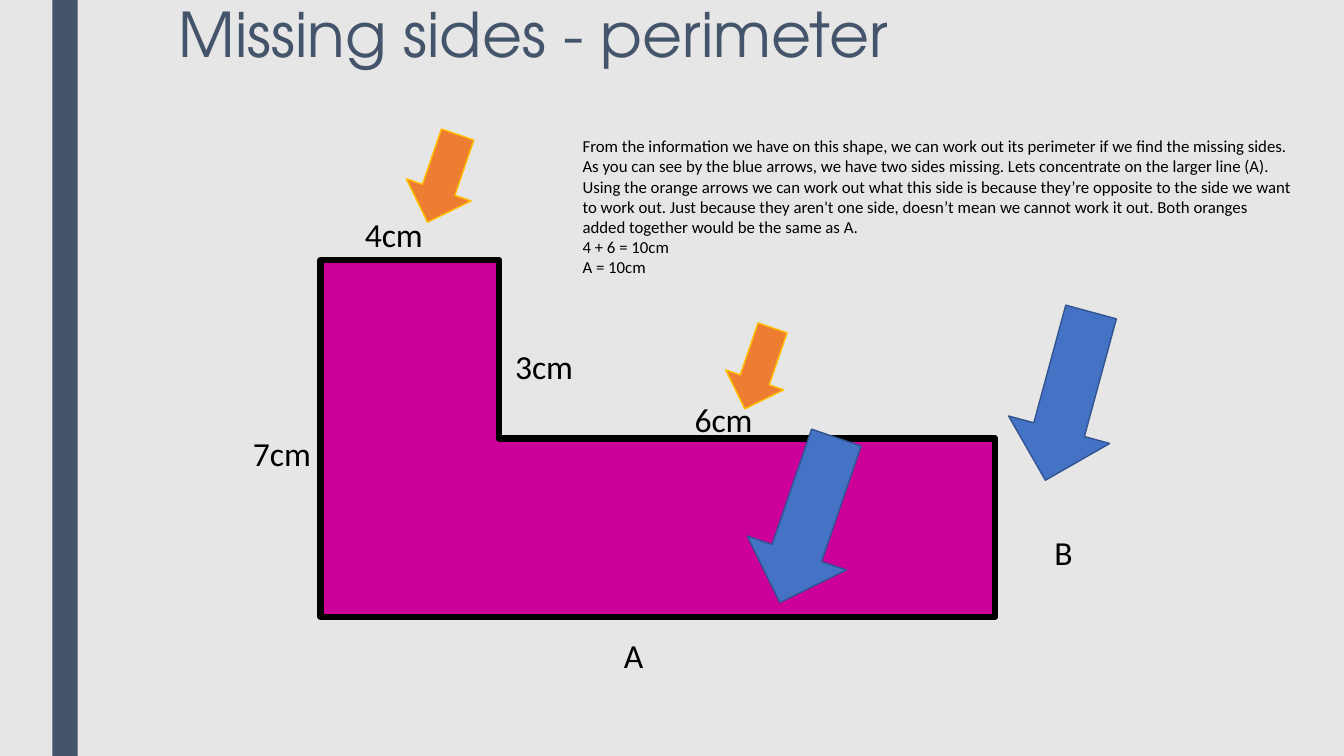
from pptx import Presentation
from pptx.dml.color import RGBColor
from pptx.enum.shapes import MSO_SHAPE as Shape
from pptx.enum.text import MSO_ANCHOR as Anchor, MSO_AUTO_SIZE as AutoSize, PP_ALIGN as Align
from pptx.util import Pt

EMU_PER_PX = 9144  # 100 px to the inch
SLIDE_WIDTH, SLIDE_HEIGHT = 1333, 750
LABEL_WIDTH, LABEL_HEIGHT = 193, 50
TITLE_ONLY = 5

COLORS = {
    "background": "E7E6E6",
    "slate": "44546A",
    "magenta": "CC0099",
    "black": "000000",
    "blue": "4472C4",
    "blue_line": "325491",
    "orange": "ED7D31",
    "orange_line": "FFC000",
}

EXPLANATION = [
    "From the information we have on this shape, we can work out its perimeter "
    "if we find the missing sides. As you can see by the blue arrows, we have two "
    "sides missing. Lets concentrate on the larger line (A). Using the orange arrows "
    "we can work out what this side is because they’re opposite to the side we want "
    "to work out. Just because they aren't one side, doesn’t mean we cannot work it "
    "out. Both oranges added together would be the same as A.",
    "4 + 6 = 10cm",
    "A = 10cm",
]

SIDE_LABELS = [
    ("4cm", 352, 207),
    ("7cm", 241, 425),
    ("3cm", 501, 338),
    ("6cm", 679, 391),
    ("A", 609, 625),
    ("B", 1036, 523),
]

ARROWS = [
    ("blue", (973, 341, 173, 104), 285.2),
    ("blue", (715, 464, 173, 104), 288.9),
    ("orange", (393, 143, 92, 68), 288.9),
    ("orange", (710, 335, 85, 61), 288.9),
]


def px(length):
    return length * EMU_PER_PX


def color(name):
    return RGBColor.from_string(COLORS[name])


def format_text(text_frame, font_name, size, color_name):
    text_frame.word_wrap = True
    text_frame.vertical_anchor = Anchor.TOP
    for paragraph in text_frame.paragraphs:
        paragraph.alignment = Align.LEFT
        for run in paragraph.runs:
            run.font.name = font_name
            run.font.size = Pt(size)
            run.font.color.rgb = color(color_name)


def add_title(slide, text, box):
    title = slide.shapes.title
    title.left, title.top, title.width, title.height = map(px, box)
    text_frame = title.text_frame
    text_frame.text = text
    text_frame.auto_size = AutoSize.NONE
    text_frame.paragraphs[0].line_spacing = 0.89
    format_text(text_frame, "TeX Gyre Adventor", 44, "slate")


def add_text(slide, text, box, size, auto_size=AutoSize.SHAPE_TO_FIT_TEXT):
    text_frame = slide.shapes.add_textbox(*map(px, box)).text_frame
    text_frame.text = text
    text_frame.auto_size = auto_size
    format_text(text_frame, "Calibri", size, "black")


def add_figure(slide, kind, box, fill, line=None, line_width=1, rotation=0):
    shape = slide.shapes.add_shape(kind, *map(px, box))
    shape.shadow.inherit = False
    shape.rotation = rotation
    shape.fill.solid()
    shape.fill.fore_color.rgb = color(fill)
    if line:
        shape.line.color.rgb = color(line)
        shape.line.width = Pt(line_width)
    else:
        shape.line.fill.background()


def main():
    presentation = Presentation()
    presentation.slide_width = px(SLIDE_WIDTH)
    presentation.slide_height = px(SLIDE_HEIGHT)
    slide = presentation.slides.add_slide(presentation.slide_layouts[TITLE_ONLY])
    slide.background.fill.solid()
    slide.background.fill.fore_color.rgb = color("background")

    add_figure(slide, Shape.RECTANGLE, (52, 0, 25, SLIDE_HEIGHT), "slate")
    add_title(slide, "Missing sides - perimeter", (167, 0, 1000, 125))
    add_figure(slide, Shape.CORNER, (318, 258, 669, 354), "magenta", "black", 4.5)
    add_text(slide, "\n".join(EXPLANATION), (568, 130, 726, 178), 12, AutoSize.NONE)
    for text, left, top in SIDE_LABELS:
        add_text(slide, text, (left, top, LABEL_WIDTH, LABEL_HEIGHT), 24)
    for fill, box, rotation in ARROWS:
        add_figure(slide, Shape.LEFT_ARROW, box, fill, f"{fill}_line", rotation=rotation)

    presentation.save("out.pptx")


if __name__ == "__main__":
    main()
